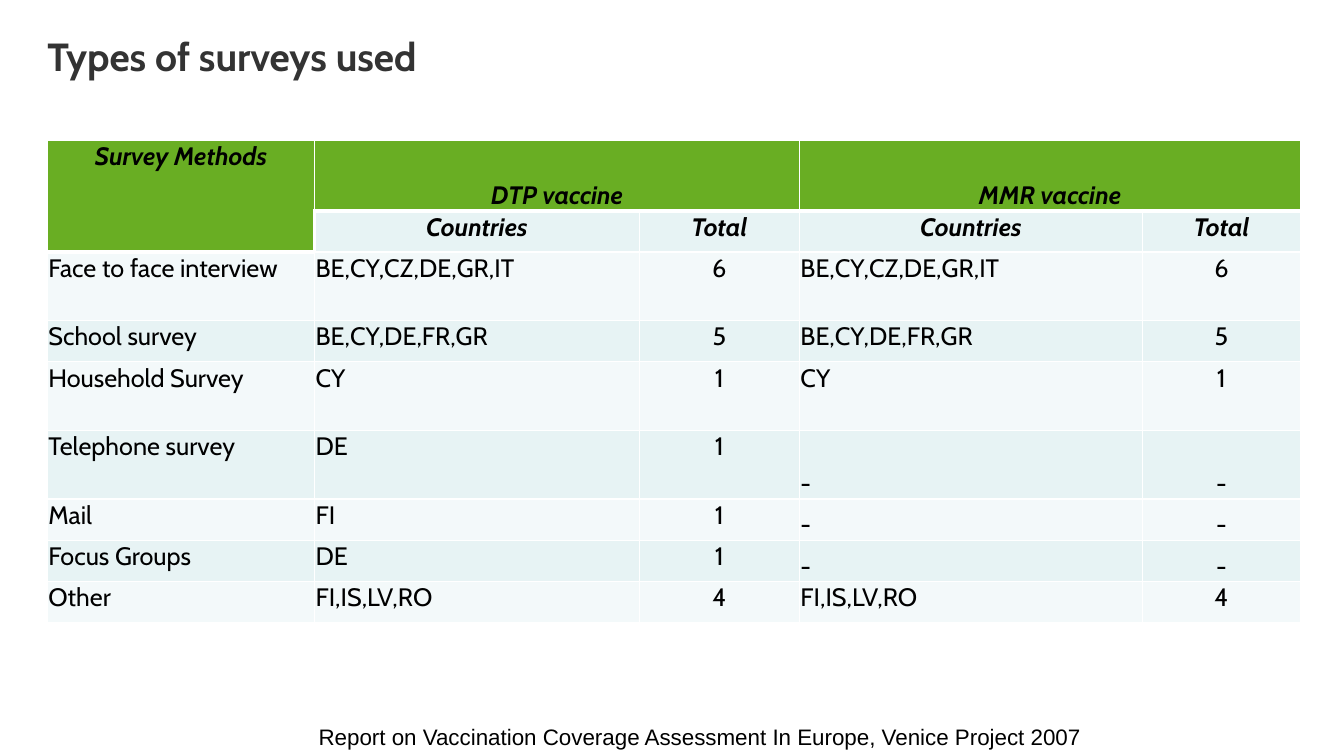
from dataclasses import dataclass

from lxml import etree
from pptx import Presentation
from pptx import util as u
from pptx.dml.color import RGBColor
from pptx.enum import text
from pptx.oxml import ns


@dataclass(frozen=True)
class Theme:
    heading_font: str = "Cabin"
    source_font: str = "Arial"
    title_size: int = 28
    table_size: int = 18
    source_size: int = 16
    title_color: str = "333333"
    text_color: str = "000000"
    header_fill: str = "69AE23"
    dark_band: str = "E7F3F4"
    light_band: str = "F3F9FA"
    border_color: str = "FFFFFF"
    thin: int = 1
    thick: int = 3


THEME = Theme()
LEFT, CENTER, RIGHT = text.PP_ALIGN.LEFT, text.PP_ALIGN.CENTER, text.PP_ALIGN.RIGHT
TOP, BOTTOM = text.MSO_ANCHOR.TOP, text.MSO_ANCHOR.BOTTOM

COLUMN_WIDTHS = [2.65, 3.22, 1.59, 3.4, 1.57]
ROW_HEIGHTS = [0.7, 0.41, 0.68, 0.41, 0.68, 0.68, 0.41, 0.41, 0.41]
HEADER_ROWS = 2
TOTAL_COLUMNS = (2, 4)

SURVEY_ROWS = [
    ["Survey Methods", "DTP vaccine", "", "MMR vaccine", ""],
    ["", "Countries", "Total", "Countries", "Total"],
    ["Face to face interview", "BE,CY,CZ,DE,GR,IT", "6", "BE,CY,CZ,DE,GR,IT", "6"],
    ["School survey", "BE,CY,DE,FR,GR", "5", "BE,CY,DE,FR,GR", "5"],
    ["Household Survey", "CY", "1", "CY", "1"],
    ["Telephone survey", "DE", "1", "-", "-"],
    ["Mail", "FI", "1", "-", "-"],
    ["Focus Groups", "DE", "1", "-", "-"],
    ["Other", "FI,IS,LV,RO", "4", "FI,IS,LV,RO", "4"],
]


def add_run(paragraph, wording, font, size, color, bold=False, italic=False):
    run = paragraph.add_run()
    run.text = wording
    run.font.name = font
    run.font.size = u.Pt(size)
    run.font.color.rgb = RGBColor.from_string(color)
    run.font.bold = bold
    run.font.italic = italic


def place(shape, left, top, width, height):
    shape.left, shape.top = u.Inches(left), u.Inches(top)
    shape.width, shape.height = u.Inches(width), u.Inches(height)


def set_title(slide, wording):
    title = slide.shapes.title
    place(title, 0.47, 0.37, 11.28, 0.87)
    frame = title.text_frame
    frame.margin_left = frame.margin_right = frame.margin_top = frame.margin_bottom = 0
    frame.vertical_anchor = TOP
    frame.word_wrap = True
    paragraph = frame.paragraphs[0]
    paragraph.alignment = LEFT
    paragraph.line_spacing = 0.9
    add_run(paragraph, wording, THEME.heading_font, THEME.title_size,
            THEME.title_color, bold=True)


def set_borders(cell, widths):
    properties = cell._tc.get_or_add_tcPr()
    for side in "LRTB":
        line = etree.SubElement(properties, ns.qn(f"a:ln{side}"),
                                w=str(u.Pt(widths.get(side, THEME.thin))))
        fill = etree.SubElement(line, ns.qn("a:solidFill"))
        etree.SubElement(fill, ns.qn("a:srgbClr"), val=THEME.border_color)


def border_widths(row, column):
    """Thick lines part the header from the rows and the corner cell."""
    widths = {}
    if row == 0 or (row, column) == (1, 0):
        widths["B"] = THEME.thick
    if row == 1 or (row, column) == (2, 0):
        widths["T"] = THEME.thick
    if (row, column) == (1, 1):
        widths["L"] = THEME.thick
    return widths


def cell_fill(row, column):
    if row == 0 or (row, column) == (1, 0):
        return THEME.header_fill
    return THEME.dark_band if row % 2 else THEME.light_band


def format_cell(cell, row, column, wording):
    is_header = row < HEADER_ROWS
    set_borders(cell, border_widths(row, column))
    cell.fill.solid()
    cell.fill.fore_color.rgb = RGBColor.from_string(cell_fill(row, column))
    cell.margin_left = cell.margin_right = cell.margin_top = u.Inches(0.01)
    cell.margin_bottom = 0
    is_vaccine = row == 0 and column > 0
    cell.vertical_anchor = BOTTOM if is_vaccine or wording == "-" else TOP
    if wording:
        paragraph = cell.text_frame.paragraphs[0]
        paragraph.alignment = CENTER if is_header or column in TOTAL_COLUMNS else LEFT
        add_run(paragraph, wording, THEME.heading_font, THEME.table_size,
                THEME.text_color, bold=is_header, italic=is_header)


def add_survey_table(slide):
    frame = slide.shapes.add_table(
        len(ROW_HEIGHTS), len(COLUMN_WIDTHS), u.Inches(0.47), u.Inches(1.39),
        u.Inches(sum(COLUMN_WIDTHS)), u.Inches(sum(ROW_HEIGHTS)))
    table = frame.table
    table.horz_banding = False
    for column, width in zip(table.columns, COLUMN_WIDTHS):
        column.width = u.Inches(width)
    for row, height in zip(table.rows, ROW_HEIGHTS):
        row.height = u.Inches(height)

    # Header spans
    table.cell(0, 0).merge(table.cell(1, 0))
    for column in (1, 3):
        table.cell(0, column).merge(table.cell(0, column + 1))

    for row, wordings in enumerate(SURVEY_ROWS):
        for column, wording in enumerate(wordings):
            format_cell(table.cell(row, column), row, column, wording)


def add_source(slide, wording):
    box = slide.shapes.add_textbox(u.Inches(1.92), u.Inches(7.13),
                                   u.Inches(8.9), u.Inches(0.37))
    box.text_frame.word_wrap = True
    paragraph = box.text_frame.paragraphs[0]
    paragraph.alignment = RIGHT
    add_run(paragraph, wording, THEME.source_font, THEME.source_size, THEME.text_color)


def main():
    presentation = Presentation()
    presentation.slide_width = u.Inches(13.33)
    presentation.slide_height = u.Inches(7.5)
    slide = presentation.slides.add_slide(presentation.slide_layouts[5])

    set_title(slide, "Types of surveys used")
    add_survey_table(slide)
    add_source(slide, "Report on Vaccination Coverage Assessment In Europe, "
                      "Venice Project 2007")

    presentation.save("out.pptx")


if __name__ == "__main__":
    main()
